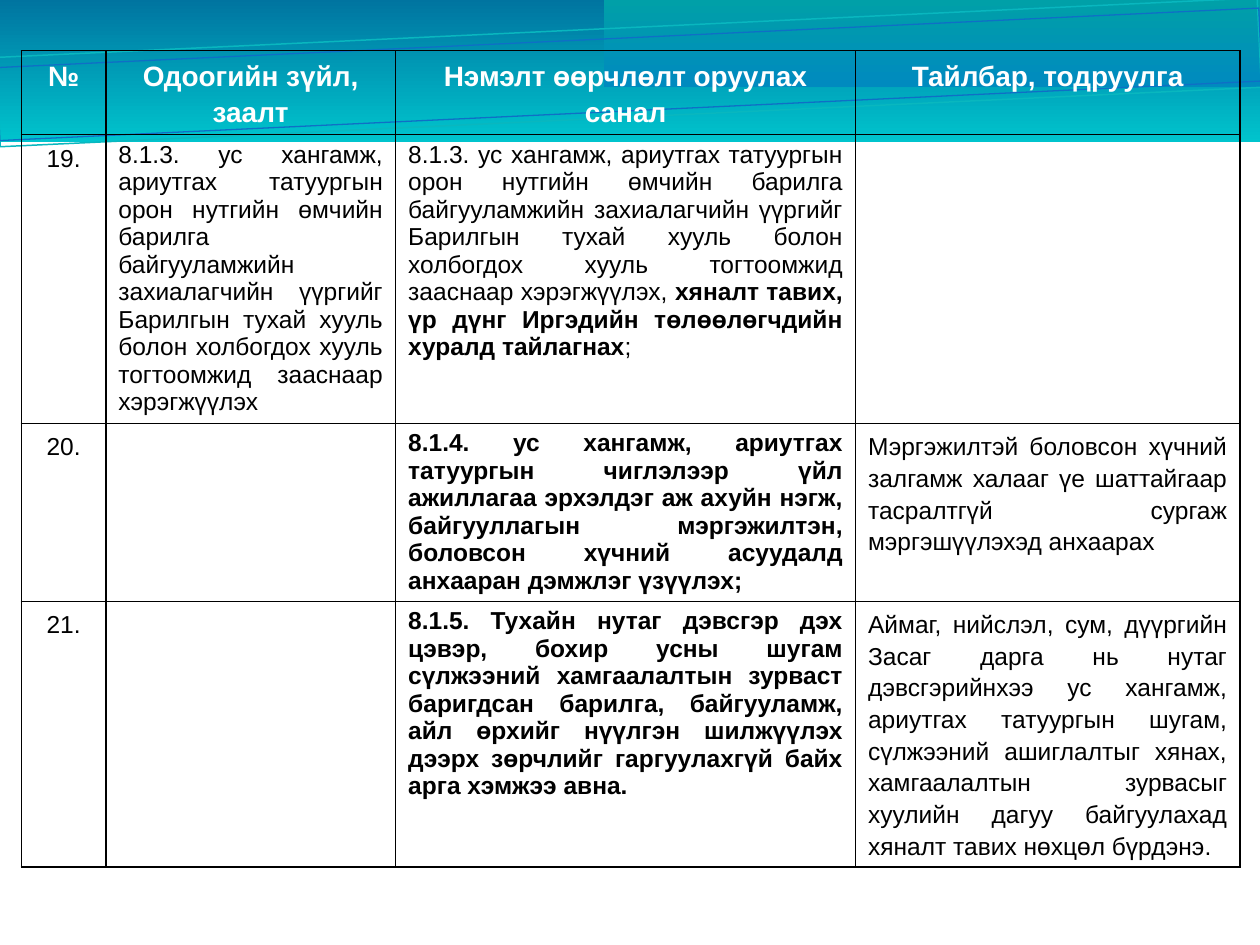
import pptx
import pptx.util
import pptx.dml.color
import pptx.enum.shapes
import pptx.enum.text
import pptx.oxml
import pptx.oxml.ns
from pptx.util import Inches

COLORS = {
    "band_top": "0074A0", "band_bottom": "00C4CD",
    "corner_top": "00A0A8", "corner_bottom": "008ABF",
    "aqua_line": "09B7BF", "blue_line": "0F6FC6",
    "header": "FFFFFF", "body": "000000", "border": "000000",
}
FONT = "Arial"

# Content: a cell is a list of (text, bold) runs
HEADERS = ["№", "Одоогийн зүйл, заалт", "Нэмэлт өөрчлөлт оруулах санал", "Тайлбар, тодруулга"]
CLAUSE = ("8.1.3. ус хангамж, ариутгах татуургын орон нутгийн өмчийн барилга "
          "байгууламжийн захиалагчийн үүргийг Барилгын тухай хууль болон "
          "холбогдох хууль тогтоомжид зааснаар хэрэгжүүлэх")
AMENDMENTS = [
    [[("19.", False)], [(CLAUSE, False)],
     [(CLAUSE + ", ", False),
      ("хяналт тавих, үр дүнг Иргэдийн төлөөлөгчдийн хуралд тайлагнах", True),
      (";", False)], []],
    [[("20.", False)], [],
     [("8.1.4. ус хангамж, ариутгах татуургын чиглэлээр үйл ажиллагаа эрхэлдэг "
       "аж ахуйн нэгж, байгууллагын мэргэжилтэн, боловсон хүчний асуудалд "
       "анхааран дэмжлэг үзүүлэх;", True)],
     [("Мэргэжилтэй боловсон хүчний залгамж халааг үе шаттайгаар тасралтгүй "
       "сургаж мэргэшүүлэхэд анхаарах", False)]],
    [[("21.", False)], [],
     [("8.1.5. Тухайн нутаг дэвсгэр дэх цэвэр, бохир усны шугам сүлжээний "
       "хамгаалалтын зурваст баригдсан барилга, байгууламж, айл өрхийг нүүлгэн "
       "шилжүүлэх дээрх зөрчлийг гаргуулахгүй байх арга хэмжээ авна.", True)],
     [("Аймаг, нийслэл, сум, дүүргийн Засаг дарга нь нутаг дэвсгэрийнхээ ус "
       "хангамж, ариутгах татуургын шугам, сүлжээний ашиглалтыг хянах, "
       "хамгаалалтын зурвасыг хуулийн дагуу байгуулахад хяналт тавих нөхцөл "
       "бүрдэнэ.", False)]],
]
ROWS = [[[(header, True)] for header in HEADERS]] + AMENDMENTS
COLUMN_WIDTHS = [0.67, 2.3, 3.65, 3.05]
ROW_HEIGHTS = [0.64, 2.29, 1.41, 2.08]
# Border widths in points, from the first edge to the last
VERTICAL_BORDERS = [1, 1, 1, 0.5, 1]
HORIZONTAL_BORDERS = [0.5, 0.5, 0.5, 0.5, 1]

# Header decoration: box, upper colour, lower colour
BANDS = [
    ((-0.01, -0.01, 10.02, 1.14), "band_top", "band_bottom"),
    ((4.79, -0.01, 5.21, 0.7), "corner_top", "corner_bottom"),
]
# Tilted outlines: box, colour, width in points
OUTLINES = [
    ((-0.02, 0.22, 10.02, 0.71), "aqua_line", 0.85),
    ((-0.02, 0.3, 10.03, 0.58), "blue_line", 0.75),
]


def rgb(name):
    return pptx.dml.color.RGBColor.from_string(COLORS[name])


def add_rectangle(slide, box):
    rectangle = slide.shapes.add_shape(
        pptx.enum.shapes.MSO_SHAPE.RECTANGLE, *map(Inches, box))
    rectangle.shadow.inherit = False
    return rectangle


def set_borders(cell, widths):
    properties = cell._tc.get_or_add_tcPr()
    for position, (side, width) in enumerate(zip("LRTB", widths)):
        border = pptx.oxml.parse_xml(
            f'<a:ln{side} {pptx.oxml.ns.nsdecls("a")} w="{pptx.util.Pt(width)}">'
            f'<a:solidFill><a:srgbClr val="{COLORS["border"]}"/></a:solidFill>'
            f'</a:ln{side}>')
        properties.insert(position, border)


def fill_cell(cell, runs, row, column):
    cell.fill.background()
    set_borders(cell, VERTICAL_BORDERS[column:column + 2] + HORIZONTAL_BORDERS[row:row + 2])
    paragraph = cell.text_frame.paragraphs[0]
    align = pptx.enum.text.PP_ALIGN
    is_header = row == 0
    paragraph.alignment = align.CENTER if is_header or column == 0 else align.JUSTIFY
    if is_header or column in (0, 3):
        paragraph.line_spacing = 1.15
    paragraph.font.name = FONT
    paragraph.font.size = pptx.util.Pt(16 if is_header else 14)
    paragraph.font.color.rgb = rgb("header" if is_header else "body")
    for text, bold in runs:
        run = paragraph.add_run()
        run.text = text
        run.font.bold = bold


def main():
    deck = pptx.Presentation()
    deck.slide_width, deck.slide_height = Inches(10), Inches(7.5)
    slide = deck.slides.add_slide(deck.slide_layouts[6])

    # Gradient bands
    for box, upper, lower in BANDS:
        band = add_rectangle(slide, box)
        band.line.fill.background()
        band.fill.gradient()
        band.fill.gradient_angle = 270
        for stop, color in zip(band.fill.gradient_stops, (upper, lower)):
            stop.color.rgb = rgb(color)

    # Tilted outlines
    for box, color, width in OUTLINES:
        outline = add_rectangle(slide, box)
        outline.rotation = 357.3
        outline.fill.background()
        outline.line.color.rgb = rgb(color)
        outline.line.width = pptx.util.Pt(width)

    # Table of amendments
    amendments = slide.shapes.add_table(
        len(ROWS), len(HEADERS), Inches(0.17), Inches(0.4),
        Inches(sum(COLUMN_WIDTHS)), Inches(sum(ROW_HEIGHTS))).table
    amendments.horz_banding = False
    for column, width in zip(amendments.columns, COLUMN_WIDTHS):
        column.width = Inches(width)
    for row, height in zip(amendments.rows, ROW_HEIGHTS):
        row.height = Inches(height)
    for r, cells in enumerate(ROWS):
        for c, runs in enumerate(cells):
            fill_cell(amendments.cell(r, c), runs, r, c)

    deck.save("out.pptx")


if __name__ == "__main__":
    main()
